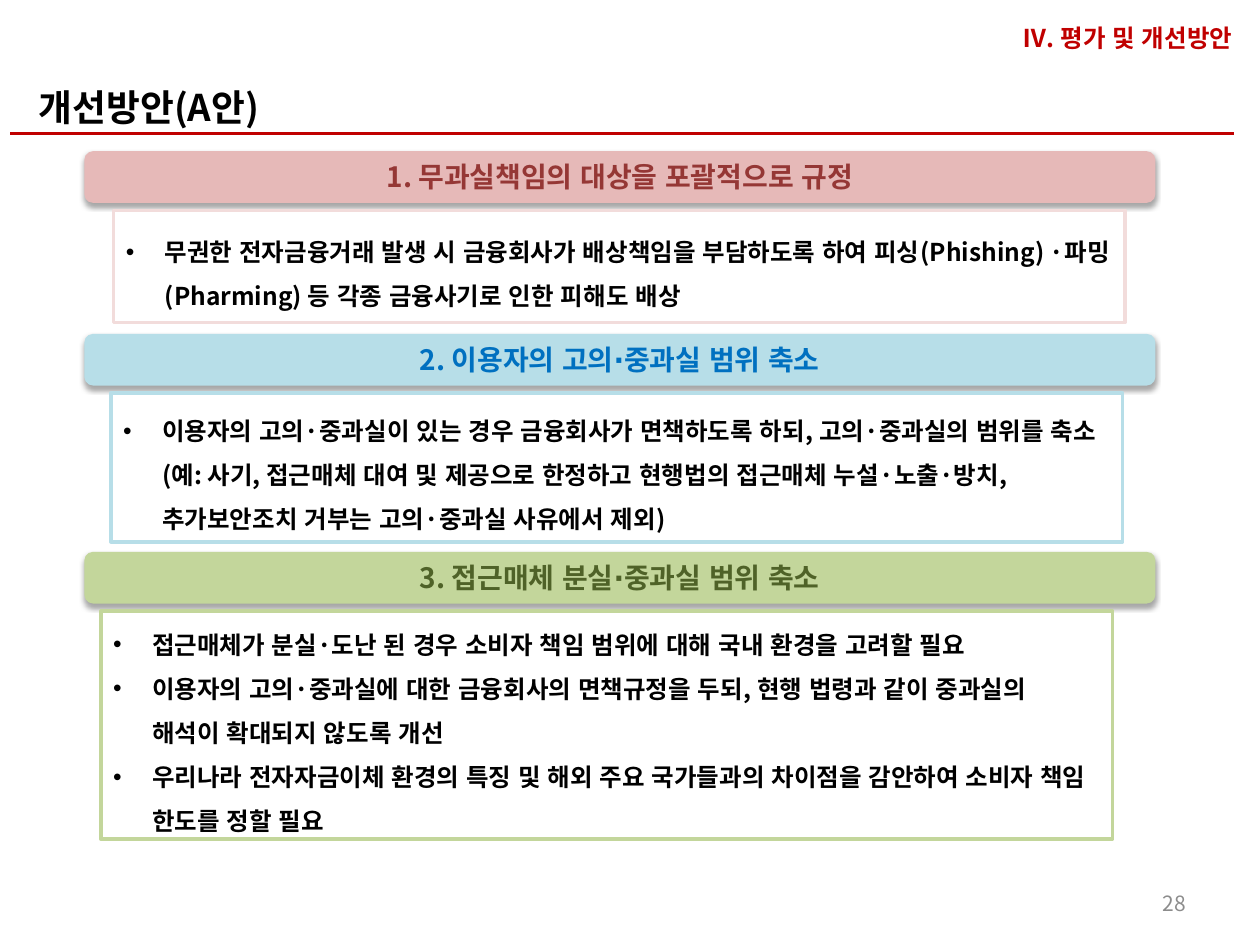
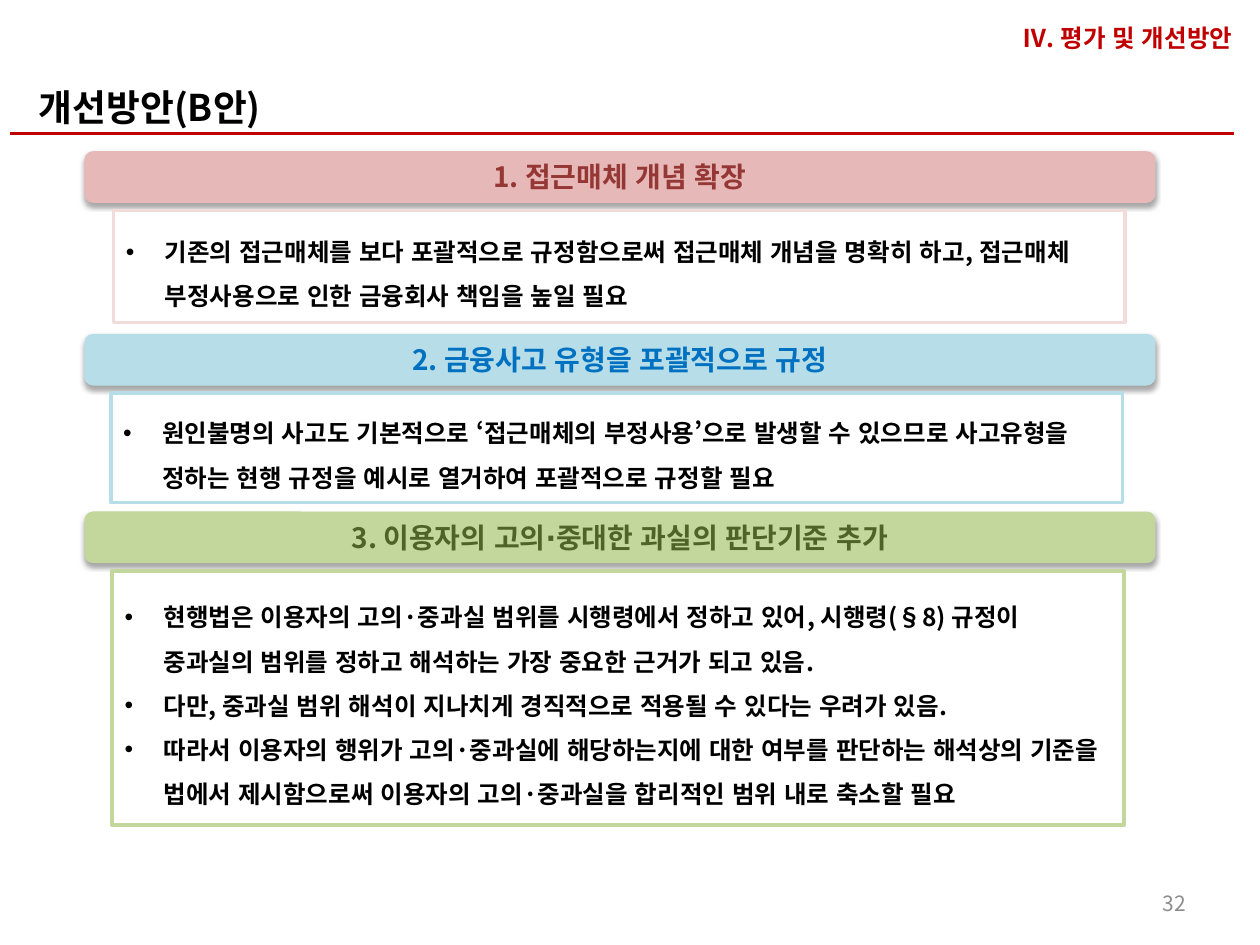
from pptx import Presentation
from pptx.dml.color import RGBColor
from pptx.enum.lang import MSO_LANGUAGE_ID
from pptx.enum.shapes import MSO_CONNECTOR, MSO_SHAPE
from pptx.enum.text import MSO_ANCHOR, MSO_AUTO_SIZE, PP_ALIGN
from pptx.oxml import parse_xml
from pptx.oxml.ns import nsdecls, qn
from pptx.util import Inches, Pt
from lxml.etree import SubElement

THEME = {
    "font": "Noto Sans CJK KR",
    "head": {"size": 14, "color": "C00000", "bold": True},
    "title": {"size": 21, "color": "000000", "bold": True},
    "body": {"size": 14, "color": "000000", "bold": True},
    "page": {"size": 12, "color": "8C8C8C", "bold": False},
    "band": {"size": 16, "bold": True},
    "rule": "C00000",
    "white": "FFFFFF",
    # band fill, band text, box border
    "tones": [
        ("E6B9B8", "953735", "F2DCDB"),
        ("B7DEE8", "0070C0", "B7DEE8"),
        ("C3D69B", "4F6228", "C3D69B"),
    ],
}
SHADOW = (
    f'<a:outerShdw {nsdecls("a")} blurRad="40000" dist="23000" dir="5400000" '
    'rotWithShape="0"><a:srgbClr val="000000"><a:alpha val="35000"/>'
    '</a:srgbClr></a:outerShdw>'
)
HEAD = "Ⅳ. 평가 및 개선방안"

# Each section: band text, band top, box (left, height), bullets
SLIDES = [
    ("개선방안(A안)", 28, [
        ("1. 무과실책임의 대상을 포괄적으로 규정", 1.2, (0.9, 0.89), [
            "무권한 전자금융거래 발생 시 금융회사가 배상책임을 부담하도록 하여 "
            "피싱(Phishing) ·파밍(Pharming) 등 각종 금융사기로 인한 피해도 배상",
        ]),
        ("2. 이용자의 고의∙중과실 범위 축소", 2.65, (0.88, 1.18), [
            "이용자의 고의·중과실이 있는 경우 금융회사가 면책하도록 하되, "
            "고의·중과실의 범위를 축소 (예: 사기, 접근매체 대여 및 제공으로 "
            "한정하고 현행법의 접근매체 누설·노출·방치, 추가보안조치 거부는 "
            "고의·중과실 사유에서 제외)",
        ]),
        ("3. 접근매체 분실∙중과실 범위 축소", 4.38, (0.8, 1.81), [
            "접근매체가 분실·도난 된 경우 소비자 책임 범위에 대해 국내 환경을 "
            "고려할 필요",
            "이용자의 고의·중과실에 대한 금융회사의 면책규정을 두되, "
            "현행 법령과 같이 중과실의 해석이 확대되지 않도록 개선",
            "우리나라 전자자금이체 환경의 특징 및 해외 주요 국가들과의 "
            "차이점을 감안하여 소비자 책임 한도를 정할 필요",
        ]),
    ]),
    ("개선방안(B안)", 32, [
        ("1. 접근매체 개념 확장", 1.2, (0.9, 0.89), [
            "기존의 접근매체를 보다 포괄적으로 규정함으로써 접근매체 개념을 "
            "명확히 하고, 접근매체 부정사용으로 인한 금융회사 책임을 높일 필요",
        ]),
        ("2. 금융사고 유형을 포괄적으로 규정", 2.65, (0.88, 0.87), [
            "원인불명의 사고도 기본적으로 ‘접근매체의 부정사용’으로 발생할 수 "
            "있으므로 사고유형을 정하는 현행 규정을 예시로 열거하여 포괄적으로 "
            "규정할 필요",
        ]),
        ("3. 이용자의 고의∙중대한 과실의 판단기준 추가", 4.06, (0.89, 2.02), [
            "현행법은 이용자의 고의·중과실 범위를 시행령에서 정하고 있어, "
            "시행령(§8) 규정이 중과실의 범위를 정하고 해석하는 가장 중요한 "
            "근거가 되고 있음.",
            "다만, 중과실 범위 해석이 지나치게 경직적으로 적용될 수 있다는 "
            "우려가 있음.",
            "따라서 이용자의 행위가 고의·중과실에 해당하는지에 대한 여부를 "
            "판단하는 해석상의 기준을 법에서 제시함으로써 이용자의 고의·중과실을 "
            "합리적인 범위 내로 축소할 필요",
        ]),
    ]),
]


def write(shape, lines, style, align, anchor=MSO_ANCHOR.MIDDLE, bullet=False):
    """Fill a shape with one styled paragraph per line."""
    frame = shape.text_frame
    frame.word_wrap = True
    frame.vertical_anchor = anchor
    for i, line in enumerate(lines):
        para = frame.add_paragraph() if i else frame.paragraphs[0]
        para.alignment = align
        if bullet:
            props = para._p.get_or_add_pPr()
            props.set("marL", str(Inches(0.31)))
            props.set("indent", str(-Inches(0.31)))
            SubElement(props, qn("a:buFont"), typeface="Arial")
            SubElement(props, qn("a:buChar"), char="•")
            para.line_spacing = 1.5
        run = para.add_run()
        run.text = line
        look = {"name": THEME["font"], "size": Pt(style["size"]),
                "bold": style["bold"], "language_id": MSO_LANGUAGE_ID.KOREAN}
        for key, value in look.items():
            setattr(run.font, key, value)
        run.font.color.rgb = RGBColor.from_string(style["color"])
        SubElement(run._r.get_or_add_rPr(), qn("a:ea"), typeface=THEME["font"])


def block(slide, kind, area, fill):
    """Add a filled shape with neither border nor shadow."""
    shape = slide.shapes.add_shape(kind, *map(Inches, area))
    shape.shadow.inherit = False
    shape.fill.solid()
    shape.fill.fore_color.rgb = RGBColor.from_string(fill)
    shape.line.fill.background()
    return shape


deck = Presentation()
deck.slide_width, deck.slide_height = Inches(10), Inches(7.5)

for title, page, parts in SLIDES:
    slide = deck.slides.add_slide(deck.slide_layouts[6])

    for text, area, name, align, anchor in [
        (str(page), (7.18, 6.97, 2.33, 0.4), "page", PP_ALIGN.RIGHT, MSO_ANCHOR.MIDDLE),
        (HEAD, (5.79, 0.13, 4.09, 0.31), "head", PP_ALIGN.RIGHT, MSO_ANCHOR.TOP),
        (title, (0.21, 0.51, 8.62, 0.68), "title", PP_ALIGN.LEFT, MSO_ANCHOR.MIDDLE),
    ]:
        label = slide.shapes.add_textbox(*map(Inches, area))
        write(label, [text], THEME[name], align, anchor)

    rule = slide.shapes.add_connector(
        MSO_CONNECTOR.STRAIGHT, *map(Inches, (0.08, 1.06, 9.79, 1.06)))
    rule.line.color.rgb = RGBColor.from_string(THEME["rule"])
    rule.line.width = Pt(1.5)
    SubElement(rule._element.spPr, qn("a:effectLst"))

    for (fill, ink, edge), (name, top, (left, height), lines) in zip(THEME["tones"], parts):
        band = block(slide, MSO_SHAPE.ROUNDED_RECTANGLE, (0.67, top, 8.5, 0.41), fill)
        band._element.spPr.find(qn("a:effectLst")).append(parse_xml(SHADOW))
        write(band, [name], THEME["band"] | {"color": ink}, PP_ALIGN.CENTER, MSO_ANCHOR.TOP)
        band.text_frame.auto_size = MSO_AUTO_SIZE.SHAPE_TO_FIT_TEXT

        box = block(slide, MSO_SHAPE.RECTANGLE, (left, top + 0.47, 8.03, height), THEME["white"])
        box.line.color.rgb = RGBColor.from_string(edge)
        box.line.width = Pt(2)
        write(box, lines, THEME["body"], PP_ALIGN.LEFT, bullet=True)

deck.save("out.pptx")
